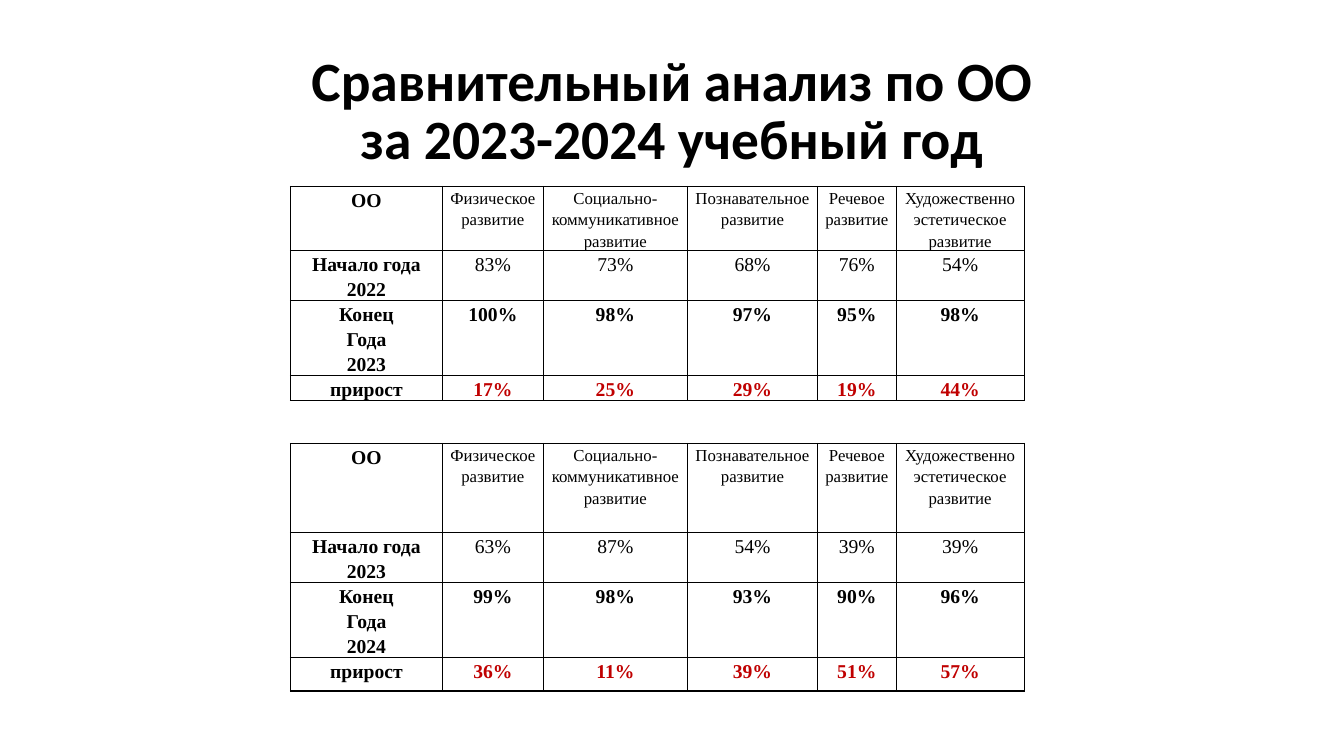
from lxml.etree import SubElement
from pptx import Presentation
from pptx.dml.color import RGBColor
from pptx.enum.text import MSO_ANCHOR, MSO_AUTO_SIZE, PP_ALIGN
from pptx.oxml.ns import qn
from pptx.util import Pt

TITLE = "Сравнительный анализ по ОО\vза 2023-2024 учебный год"
AREAS = [
    "ОО",
    "Физическое развитие",
    "Социально-коммуникативное развитие",
    "Познавательное развитие",
    "Речевое развитие",
    "Художественно эстетическое развитие",
]
YEARS = [
    {
        "top": 133.2,
        "row_heights": [45.7, 35.7, 53.5, 17.8],
        "rows": [
            ["Начало года 2022", "83%", "73%", "68%", "76%", "54%"],
            ["Конец\nГода\n2023", "100%", "98%", "97%", "95%", "98%"],
            ["прирост", "17%", "25%", "29%", "19%", "44%"],
        ],
    },
    {
        "top": 316.8,
        "row_heights": [63.8, 35.7, 53.5, 23.8],
        "rows": [
            ["Начало года\n2023", "63%", "87%", "54%", "39%", "39%"],
            ["Конец\nГода\n2024", "99%", "98%", "93%", "90%", "96%"],
            ["прирост", "36%", "11%", "39%", "51%", "57%"],
        ],
    },
]
COLORS = {"text": "000000", "growth": "C00000", "border": "000000"}
COLUMN_WIDTHS = [108.7, 72, 103, 92.9, 56.2, 91.4]
TABLE_LEFT = 207.4
SIDE_MARGIN = 5
HEADER, START, END, GROWTH = range(4)


def format_paragraph(paragraph, font_name, size, bold, color, spacing):
    paragraph.alignment = PP_ALIGN.CENTER
    paragraph.line_spacing = spacing
    for run in paragraph.runs:
        run.font.name = font_name
        run.font.size = Pt(size)
        run.font.bold = bold
        run.font.color.rgb = RGBColor.from_string(COLORS[color])


def add_borders(cell):
    properties = cell._tc.get_or_add_tcPr()
    for side in ("a:lnL", "a:lnR", "a:lnT", "a:lnB"):
        line = SubElement(properties, qn(side), w=str(Pt(1)))
        fill = SubElement(line, qn("a:solidFill"))
        SubElement(fill, qn("a:srgbClr"), val=COLORS["border"])


def fill_cell(cell, content, row, column):
    """Write one cell: row names, year-end results and growth are bold."""
    add_borders(cell)
    cell.fill.background()
    cell.margin_left = cell.margin_right = Pt(SIDE_MARGIN)
    cell.margin_top = cell.margin_bottom = 0
    cell.vertical_anchor = MSO_ANCHOR.TOP
    cell.text_frame.text = content
    is_row_name = column == 0
    size = 12 if row == HEADER and not is_row_name else 14
    bold = is_row_name or row in (END, GROWTH)
    color = "growth" if row == GROWTH and not is_row_name else "text"
    for paragraph in cell.text_frame.paragraphs:
        format_paragraph(paragraph, "Times New Roman", size, bold, color, 1.15)


def add_year_table(slide, year):
    rows = [AREAS] + year["rows"]
    heights = year["row_heights"]
    table = slide.shapes.add_table(
        len(rows), len(AREAS), Pt(TABLE_LEFT), Pt(year["top"]),
        Pt(sum(COLUMN_WIDTHS)), Pt(sum(heights)),
    ).table
    table.first_row = table.horz_banding = False
    for column, width in zip(table.columns, COLUMN_WIDTHS):
        column.width = Pt(width)
    for r, (height, contents) in enumerate(zip(heights, rows)):
        table.rows[r].height = Pt(height)
        for c, content in enumerate(contents):
            fill_cell(table.cell(r, c), content, r, c)


def main():
    prs = Presentation()
    prs.slide_width, prs.slide_height = Pt(960), Pt(540)
    slide = prs.slides.add_slide(prs.slide_layouts[5])

    title = slide.shapes.title
    title.left, title.top, title.width, title.height = Pt(66), Pt(28.8), Pt(828), Pt(104.4)
    title.text_frame.text = TITLE
    title.text_frame.auto_size = MSO_AUTO_SIZE.NONE
    title.text_frame.vertical_anchor = MSO_ANCHOR.MIDDLE
    format_paragraph(title.text_frame.paragraphs[0], "Calibri", 39.6, True, "text", 0.87)

    for year in YEARS:
        add_year_table(slide, year)
    prs.save("out.pptx")


if __name__ == "__main__":
    main()
